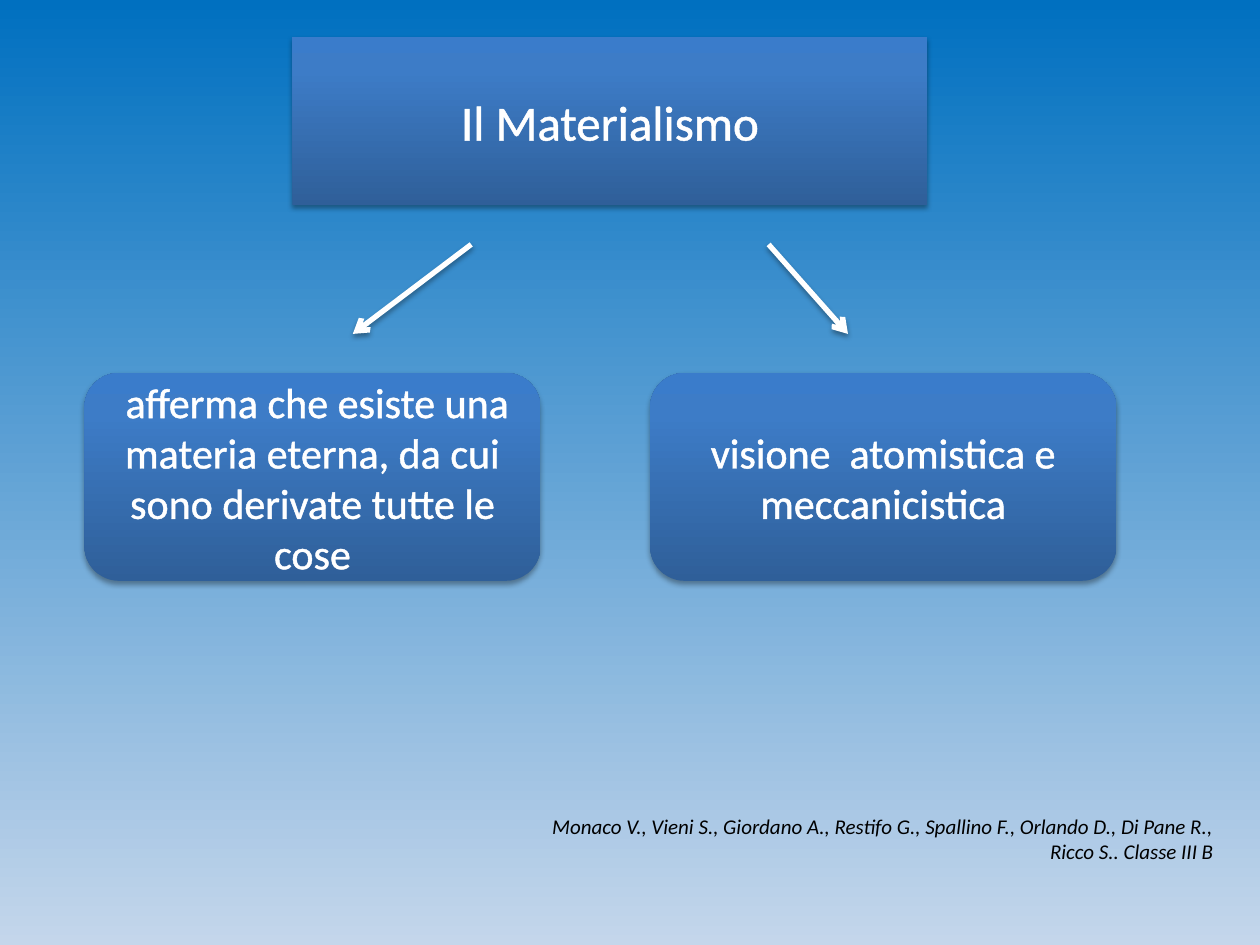
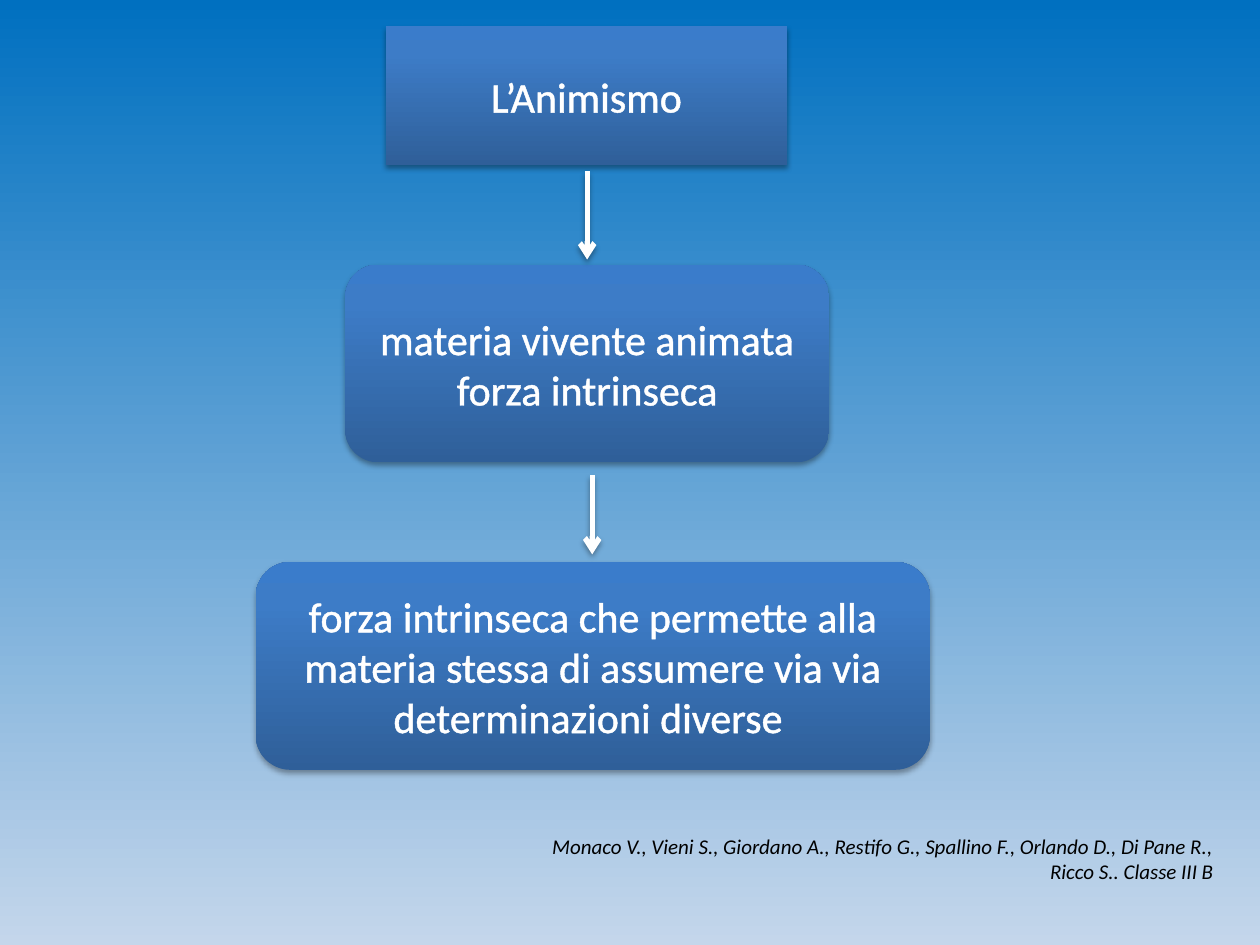
from lxml.etree import SubElement
from pptx import Presentation
from pptx.dml.color import RGBColor
from pptx.enum.shapes import MSO_CONNECTOR, MSO_SHAPE
from pptx.enum.text import MSO_ANCHOR, MSO_AUTO_SIZE, PP_ALIGN
from pptx.oxml.ns import qn
from pptx.util import Inches, Pt

FONT = "Calibri"
WHITE, BLACK = "FFFFFF", "000000"
SKY = [(0, "0070C0"), (100, "C4D6EB")]
PANEL = [(0, "2F5F99"), (80, "3D7CC7"), (100, "3A7CCB")]
AUTHORS = ("Monaco V., Vieni S., Giordano A., Restifo G., Spallino F., "
           "Orlando D., Di Pane R., Ricco S.. Classe III B")


def rgb(color):
    return RGBColor.from_string(color)


def add(parent, tag, **attrs):
    return SubElement(parent, qn(tag), {k: str(v) for k, v in attrs.items()})


def set_gradient(fill, element, stops, angle):
    """Fill with (percent, colour) stops; angle runs counter-clockwise."""
    fill.gradient()
    fill.gradient_angle = angle
    gs_list = element.find(".//" + qn("a:gsLst"))
    for gs in list(gs_list):
        gs_list.remove(gs)
    for percent, color in stops:
        gs = add(gs_list, "a:gs", pos=percent * 1000)
        add(gs, "a:srgbClr", val=color)


def add_shadow(shape):
    effects = add(shape._element.spPr, "a:effectLst")
    shadow = add(effects, "a:outerShdw", blurRad=Pt(3.1), dist=Pt(1.8),
                 dir=5400000, rotWithShape=0)
    color = add(shadow, "a:srgbClr", val=BLACK)
    add(color, "a:alpha", val=35000)


def write(shape, text, size, color, align, italic=None):
    tf = shape.text_frame
    tf.word_wrap = True
    tf.auto_size = MSO_AUTO_SIZE.NONE
    tf.vertical_anchor = MSO_ANCHOR.MIDDLE
    p = tf.paragraphs[0]
    p.alignment = align
    r = p.add_run()
    r.text = text
    r.font.name, r.font.size, r.font.italic = FONT, Pt(size), italic
    r.font.color.rgb = rgb(color)
    return r


def style_panel(sp, text, size):
    set_gradient(sp.fill, sp._element, PANEL, 90)
    sp.line.fill.background()
    add_shadow(sp)
    r = write(sp, text, size, WHITE, PP_ALIGN.CENTER)
    rPr = r.font._element
    outline = add(rPr, "a:ln", w=Pt(1.45))
    add(add(outline, "a:solidFill"), "a:srgbClr", val=WHITE)
    rPr.insert(0, outline)


def add_heading(s, box, text, size):
    """Turn the title placeholder into a rounded panel."""
    title = s.shapes.title
    title.left, title.top, title.width, title.height = map(Inches, box)
    spPr = title._element.spPr
    geometry = add(spPr, "a:prstGeom", prst="roundRect")
    add(geometry, "a:avLst")
    style_panel(title, text, size)


def add_panel(s, box, text):
    sp = s.shapes.add_shape(MSO_SHAPE.ROUNDED_RECTANGLE, *map(Inches, box))
    style_panel(sp, text, 24)


def add_arrow(s, start, end):
    line = s.shapes.add_connector(MSO_CONNECTOR.STRAIGHT,
                                  *map(Inches, start + end))
    line.line.color.rgb = rgb(WHITE)
    line.line.width = Pt(3)
    add(line.line._get_or_add_ln(), "a:tailEnd", type="arrow")
    add_shadow(line)


def add_authors(s, top):
    box = s.shapes.add_textbox(*map(Inches, (4.06, top, 5.67, 0.77)))
    write(box, AUTHORS, 12, BLACK, PP_ALIGN.RIGHT, italic=True)


def add_concept_slide(prs, heading, panels, arrows, authors_top):
    s = prs.slides.add_slide(prs.slide_layouts[5])
    add_heading(s, *heading)
    for box, text in panels:
        add_panel(s, box, text)
    for start, end in arrows:
        add_arrow(s, start, end)
    add_authors(s, authors_top)


def main():
    prs = Presentation()
    prs.slide_width, prs.slide_height = Inches(10), Inches(7.5)
    master = prs.slide_master
    set_gradient(master.background.fill, master._element, SKY, 270)

    add_concept_slide(
        prs,
        heading=((2.32, 0.29, 5.04, 1.34), "Il Materialismo", 28),
        panels=[
            ((0.67, 2.96, 3.62, 1.65), " afferma che esiste una materia "
             "eterna, da cui sono derivate tutte le cose"),
            ((5.16, 2.96, 3.7, 1.65),
             "visione  atomistica e meccanicistica"),
        ],
        arrows=[((3.74, 1.94), (2.8, 2.65)), ((6.1, 1.94), (6.73, 2.65))],
        authors_top=6.27)

    add_concept_slide(
        prs,
        heading=((3.06, 0.21, 3.19, 1.1), "L’Animismo", 24),
        panels=[
            ((2.74, 2.1, 3.84, 1.57),
             "materia vivente animata forza intrinseca"),
            ((2.03, 4.46, 5.35, 1.65), "forza intrinseca che permette alla "
             "materia stessa di assumere via via determinazioni diverse "),
        ],
        arrows=[((4.66, 1.36), (4.66, 2.06)), ((4.7, 3.77), (4.7, 4.4))],
        authors_top=6.43)

    prs.save("out.pptx")


if __name__ == "__main__":
    main()
